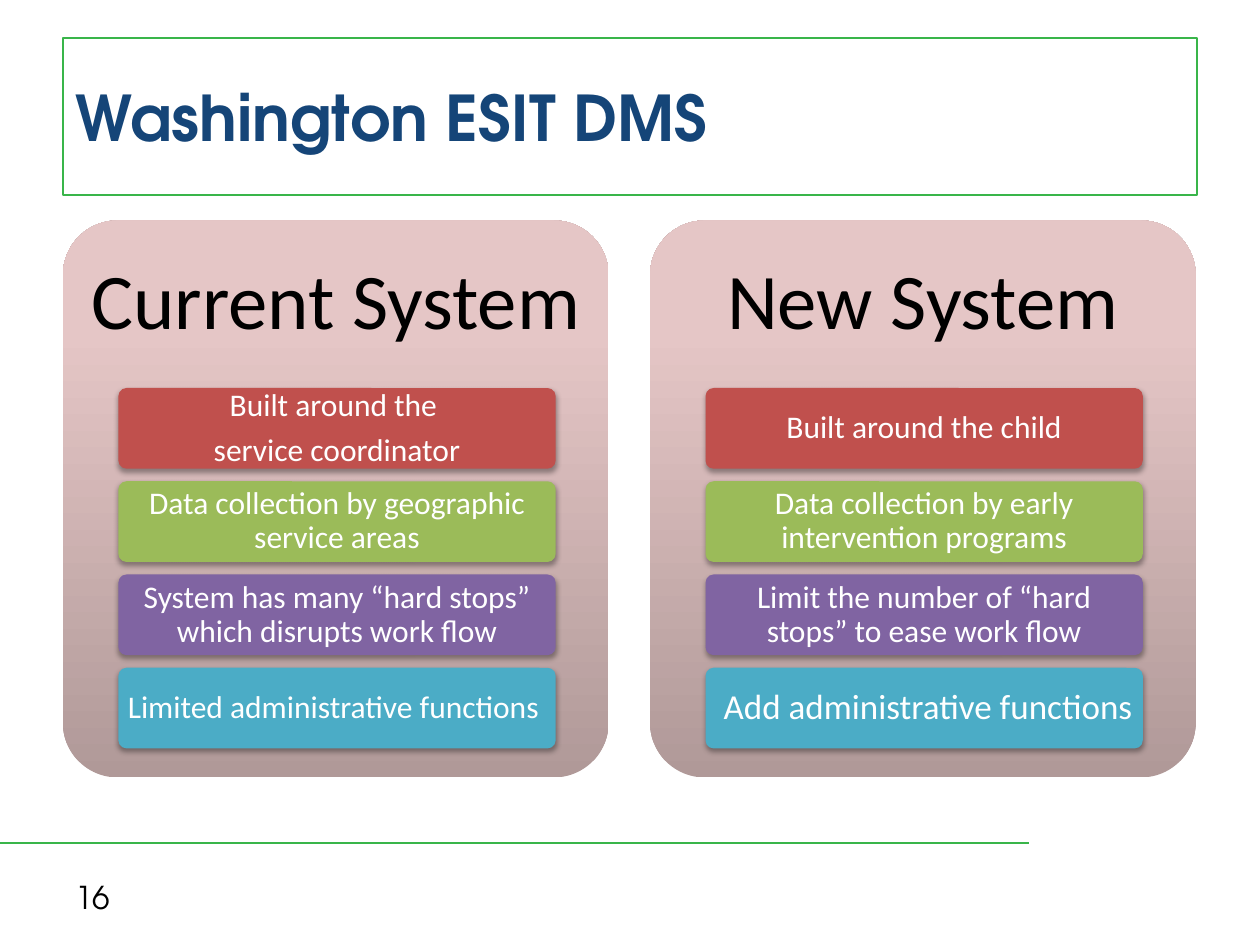
from lxml import etree
from pptx import Presentation
from pptx.dml.color import RGBColor
from pptx.enum.shapes import MSO_CONNECTOR, MSO_SHAPE
from pptx.enum.text import MSO_ANCHOR, PP_ALIGN
from pptx.oxml import parse_xml
from pptx.oxml.ns import nsdecls, qn
from pptx.util import Inches, Pt

GREEN = RGBColor(0x39, 0xB5, 0x4A)
NAVY = RGBColor(0x15, 0x45, 0x78)
BLACK = RGBColor(0, 0, 0)
WHITE = RGBColor(0xFF, 0xFF, 0xFF)
ROW_COLORS = [
    RGBColor(0xC0, 0x50, 0x4D),
    RGBColor(0x9B, 0xBB, 0x59),
    RGBColor(0x80, 0x64, 0xA2),
    RGBColor(0x4B, 0xAC, 0xC6),
]
HEAD_FONT, BODY_FONT = "TeX Gyre Adventor", "Calibri"

# Each row: its paragraphs and its text size
COLUMNS = [
    ("Current System", [
        (["Built around the ", "service coordinator"], 18),
        (["Data collection by geographic service areas"], 18),
        (["System has many “hard stops” which disrupts work flow"], 18),
        (["Limited administrative functions "], 18),
    ]),
    ("New System", [
        (["Built around the child"], 18),
        (["Data collection by early intervention programs"], 18),
        (["Limit the number of “hard stops” to ease work flow"], 18),
        ([" Add administrative functions"], 20),
    ]),
]
PANEL_GRADIENT = f"""<a:gradFill {nsdecls('a')} rotWithShape="1"><a:gsLst>
<a:gs pos="0"><a:srgbClr val="B09998"/></a:gs>
<a:gs pos="80000"><a:srgbClr val="E5C6C6"/></a:gs>
<a:gs pos="100000"><a:srgbClr val="E6C7C6"/></a:gs>
</a:gsLst><a:lin ang="16200000" scaled="0"/></a:gradFill>"""
ROW_SHADOW = f"""<a:effectLst {nsdecls('a')}>
<a:outerShdw blurRad="39370" dist="22860" dir="5400000" rotWithShape="0">
<a:srgbClr val="000000"><a:alpha val="35000"/></a:srgbClr>
</a:outerShdw></a:effectLst>"""


def write(sp, lines, size, font, color, bold=False, align=PP_ALIGN.LEFT,
          inset=(0.1, 0.05), spacing=None, after=0):
    tf = sp.text_frame
    tf.word_wrap = True
    tf.vertical_anchor = MSO_ANCHOR.MIDDLE
    tf.margin_left = tf.margin_right = Inches(inset[0])
    tf.margin_top = tf.margin_bottom = Inches(inset[1])
    for i, line in enumerate(lines):
        p = tf.add_paragraph() if i else tf.paragraphs[0]
        p.alignment = align
        p.line_spacing = spacing
        p.space_after = Pt(size * after)
        r = p.add_run()
        r.text = line
        r.font.size, r.font.name, r.font.bold = Pt(size), font, bold
        r.font.color.rgb = color


def add_round_rect(s, left, top, width, height):
    sp = s.shapes.add_shape(MSO_SHAPE.ROUNDED_RECTANGLE, Inches(left),
                            Inches(top), Inches(width), Inches(height))
    sp.adjustments[0] = 0.1
    sp.line.fill.background()
    sp.shadow.inherit = False
    return sp


prs = Presentation()
prs.slide_width, prs.slide_height = Inches(10), Inches(7.5)
s = prs.slides.add_slide(prs.slide_layouts[5])

# Title
title = s.shapes.title
title.left, title.top = Inches(0.5), Inches(0.3)
title.width, title.height = Inches(9), Inches(1.25)
title.line.color.rgb = GREEN
title.line.width = Pt(1)
write(title, ["Washington ESIT DMS"], 36, HEAD_FONT, NAVY, bold=True)

# Footer rule and page number
rule = s.shapes.add_connector(MSO_CONNECTOR.STRAIGHT, 0, Inches(6.69),
                              Inches(8.17), Inches(6.69))
rule.line.color.rgb = GREEN
rule.line.width = Pt(1.5)
etree.SubElement(rule._element.spPr, qn("a:effectLst"))
number = s.shapes.add_textbox(Inches(0.5), Inches(6.92), Inches(2.33), Inches(0.4))
write(number, ["16"], 18, HEAD_FONT, BLACK)

# Two panels, each with a heading and four rows
for col, (heading, rows) in enumerate(COLUMNS):
    left = 0.5 + col * 4.66
    panel = add_round_rect(s, left, 1.75, 4.33, 4.42)
    panel.fill.background()
    no_fill = panel._element.spPr.find(qn("a:noFill"))
    panel._element.spPr.replace(no_fill, parse_xml(PANEL_GRADIENT))

    head = s.shapes.add_textbox(Inches(left), Inches(1.75), Inches(4.33), Inches(1.32))
    write(head, [heading], 45, BODY_FONT, BLACK, align=PP_ALIGN.CENTER,
          inset=(0.19, 0.19), spacing=0.9, after=0.35)

    for row, ((lines, size), color) in enumerate(zip(rows, ROW_COLORS)):
        box = add_round_rect(s, left + 0.44, 3.08 + row * 0.74, 3.47, 0.64)
        box.fill.solid()
        box.fill.fore_color.rgb = color
        spPr = box._element.spPr
        spPr.replace(spPr.find(qn("a:effectLst")), parse_xml(ROW_SHADOW))
        write(box, lines, size, BODY_FONT, WHITE, align=PP_ALIGN.CENTER,
              inset=(size * 0.003, 0.04), spacing=0.9, after=0.35)

prs.save("out.pptx")
